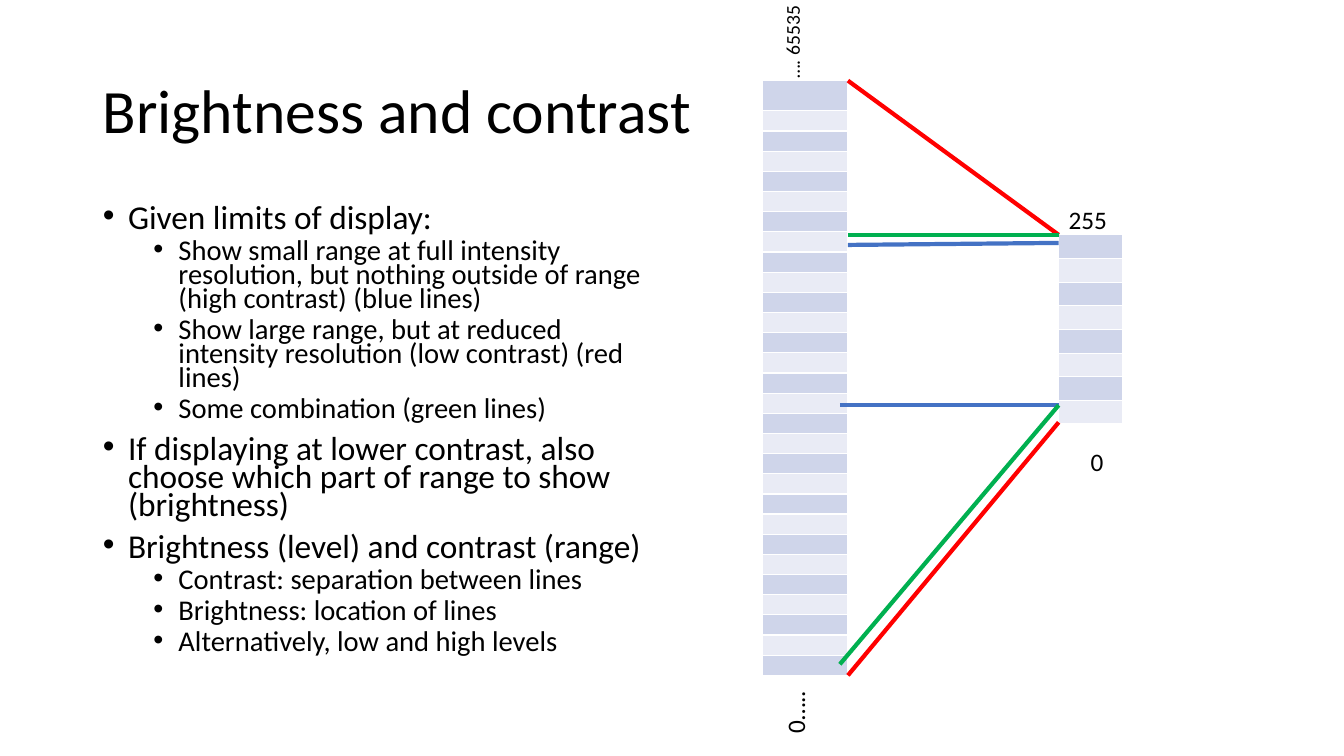
from lxml import etree
from pptx import Presentation
from pptx.dml.color import RGBColor
from pptx.enum import shapes, text
from pptx.oxml.ns import qn
from pptx.util import Inches, Pt

BLACK = RGBColor(0x00, 0x00, 0x00)
DARK = RGBColor(0xCF, 0xD5, 0xEA)
LIGHT = RGBColor(0xE9, 0xEB, 0xF5)
BLUE = RGBColor(0x44, 0x72, 0xC4)
RED = RGBColor(0xFF, 0x00, 0x00)
GREEN = RGBColor(0x00, 0xB0, 0x50)

# Bullet level and wording
POINTS = [
    (0, "Given limits of display:"),
    (1, "Show small range at full intensity resolution, but nothing outside "
        "of range (high contrast) (blue lines)"),
    (1, "Show large range, but at reduced intensity resolution (low contrast) "
        "(red lines)"),
    (1, "Some combination (green lines)"),
    (0, "If displaying at lower contrast, also choose which part of range "
        "to show (brightness)"),
    (0, "Brightness (level) and contrast (range)"),
    (1, "Contrast: separation between lines"),
    (1, "Brightness: location of lines"),
    (1, "Alternatively, low and high levels"),
]

# Ends of the mapping lines: edges of the two scales, and where lines meet them
LEFT, INNER, RIGHT = 8.41, 8.33, 10.5
LINES = [
    (BLUE, LEFT, 2.43, 2.41),
    (BLUE, INNER, 4.02, 4.02),
    (RED, LEFT, 6.7, 4.19),
    (RED, LEFT, 0.8, 2.33),
    (GREEN, LEFT, 2.33, 2.33),
    (GREEN, INNER, 6.59, 4.02),
]

# Wording, left, top, width, height, size, rotation, wrap
LABELS = [
    ("0…..", 7.26, 6.55, 1.25, 0.4, 18, 270, True),
    ("…. 65535", 7.23, 0.08, 1.26, 0.34, 14, 270, True),
    ("0", 10.72, 4.38, 0.33, 0.4, 18, 0, False),
    ("255", 10.5, 1.98, 0.87, 0.4, 18, 0, True),
]


def place(shape, left, top, width, height):
    shape.left, shape.top = Inches(left), Inches(top)
    shape.width, shape.height = Inches(width), Inches(height)


def style(para, size):
    for run in para.runs:
        run.font.name = "Calibri"
        run.font.size = Pt(size)
        run.font.color.rgb = BLACK


def add_title(slide, words):
    title = slide.shapes.title
    place(title, 0.92, 0.4, 11.5, 1.45)
    frame = title.text_frame
    frame.text = words
    frame.vertical_anchor = text.MSO_ANCHOR.MIDDLE
    para = frame.paragraphs[0]
    para.alignment = text.PP_ALIGN.LEFT
    para.line_spacing = 0.9
    style(para, 44)


def add_points(slide):
    body = slide.placeholders[1]
    place(body, 0.92, 2, 5.57, 5.38)
    frame = body.text_frame
    frame.auto_size = text.MSO_AUTO_SIZE.NONE
    frame.text = "\n".join(words for _, words in POINTS)
    for para, (level, _) in zip(frame.paragraphs, POINTS):
        para.level = level
        para.line_spacing = 0.7
        para.space_before = Pt(5 if level else 10)
        style(para, 20.4 if level else 23.8)
        props = para._p.get_or_add_pPr()
        props.set("marL", str(Inches(0.25 + 0.5 * level)))
        props.set("indent", str(Inches(-0.25)))
        font = etree.SubElement(props, qn("a:buFont"))
        font.set("typeface", "Arial")
        etree.SubElement(props, qn("a:buChar")).set("char", "•")


def add_scale(slide, left, top, width, heights):
    frame = slide.shapes.add_table(
        len(heights), 1, Inches(left), Inches(top),
        Inches(width), Inches(sum(heights)))
    table = frame.table
    table.first_row = False
    table.columns[0].width = Inches(width)
    for i, height in enumerate(heights):
        table.rows[i].height = Inches(height)
        cell = table.cell(i, 0)
        cell.margin_top = cell.margin_bottom = 0
        cell.fill.solid()
        cell.fill.fore_color.rgb = LIGHT if i % 2 else DARK
        # Small type keeps the empty row from growing
        para = cell.text_frame.paragraphs[0]._p
        etree.SubElement(para, qn("a:endParaRPr")).set("sz", "600")


def add_line(slide, color, start, y1, y2):
    line = slide.shapes.add_connector(
        shapes.MSO_CONNECTOR.STRAIGHT,
        Inches(start), Inches(y1), Inches(RIGHT), Inches(y2))
    line.line.color.rgb = color
    line.line.width = Pt(3)
    etree.SubElement(line._element.spPr, qn("a:effectLst"))


def add_label(slide, words, left, top, width, height, size, turn, wrap):
    box = slide.shapes.add_textbox(
        Inches(left), Inches(top), Inches(width), Inches(height))
    box.rotation = turn
    frame = box.text_frame
    frame.word_wrap = wrap
    frame.auto_size = text.MSO_AUTO_SIZE.SHAPE_TO_FIT_TEXT
    frame.text = words
    style(frame.paragraphs[0], size)


def main():
    deck = Presentation()
    deck.slide_width, deck.slide_height = Inches(13.33), Inches(7.5)
    slide = deck.slides.add_slide(deck.slide_layouts[1])

    # Title and bullets
    add_title(slide, "Brightness and contrast")
    add_points(slide)

    # Image scale and display scale
    add_scale(slide, 7.56, 0.8, 0.85, [0.3] + [0.2] * 28)
    add_scale(slide, RIGHT, 2.33, 0.63, [0.235] * 8)

    # Mapping lines and scale limits
    for line in LINES:
        add_line(slide, *line)
    for label in LABELS:
        add_label(slide, *label)

    deck.save("out.pptx")


if __name__ == "__main__":
    main()
